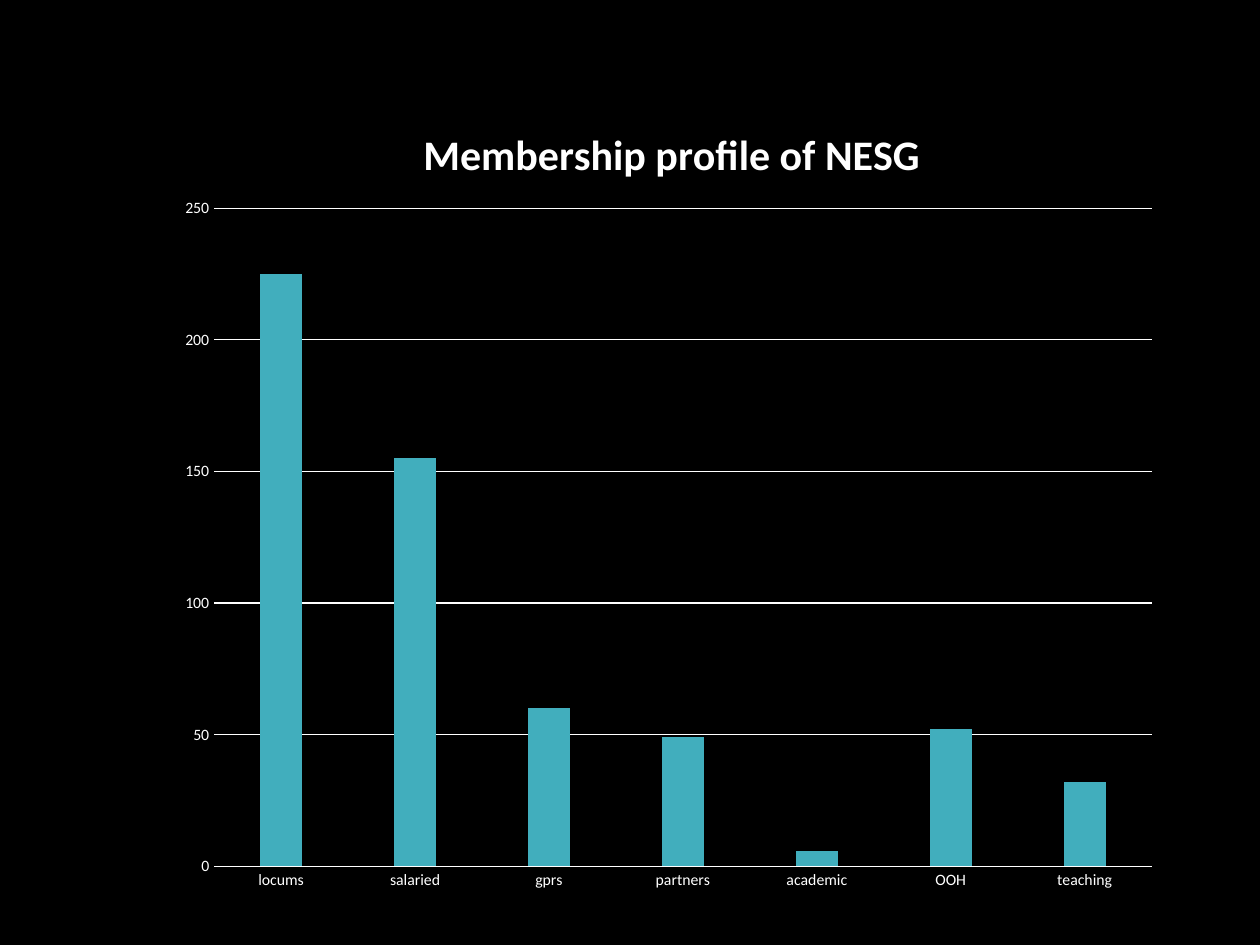
from dataclasses import dataclass

from lxml.etree import SubElement
from pptx import Presentation
from pptx.chart.data import CategoryChartData
from pptx.dml.color import RGBColor
from pptx.enum.chart import XL_CHART_TYPE, XL_TICK_MARK
from pptx.oxml import parse_xml
from pptx.oxml.ns import nsdecls, qn
from pptx.util import Inches, Pt


@dataclass(frozen=True)
class Theme:
    face: str = "Calibri"
    back: RGBColor = RGBColor(0, 0, 0)
    ink: RGBColor = RGBColor(255, 255, 255)
    bar: RGBColor = RGBColor(0x41, 0xAE, 0xBD)
    head: int = 24
    base: int = 10
    tick: int = 9
    rule: float = 0.75


class Deck:
    def __init__(self, theme):
        self.theme = theme
        self.prs = Presentation()
        self.prs.slide_width, self.prs.slide_height = Inches(10), Inches(7.5)
        self.slide = self.prs.slides.add_slide(self.prs.slide_layouts[6])
        fill = self.slide.background.fill
        fill.solid()
        fill.fore_color.rgb = theme.back

    def style(self, font, size, bold=False):
        font.name, font.size, font.bold = self.theme.face, Pt(size), bold
        font.color.rgb = self.theme.ink

    def line(self, form):
        form.line.color.rgb = self.theme.ink
        form.line.width = Pt(self.theme.rule)

    def place(self, part, **share):
        """Fix a chart part at shares of the chart's size."""
        area = part.find(qn("c:layout"))
        if area is None:
            area = parse_xml(f"<c:layout {nsdecls('c')}/>")
            part.insert(1 if part.tag == qn("c:title") else 0, area)
        spot = SubElement(area, qn("c:manualLayout"))
        if "w" in share:
            SubElement(spot, qn("c:layoutTarget")).set("val", "inner")
        for key in "xy":
            SubElement(spot, qn(f"c:{key}Mode")).set("val", "edge")
        for key, value in share.items():
            SubElement(spot, qn(f"c:{key}")).set("val", str(value))

    def columns(self, title, data, left, top, width, height):
        """Add a column chart; its box is in shares of the slide."""
        wide, high = self.prs.slide_width, self.prs.slide_height
        box = [int(wide * left), int(high * top), int(wide * width), int(high * height)]
        chart = self.slide.shapes.add_chart(
            XL_CHART_TYPE.COLUMN_CLUSTERED, *box, data).chart
        self.style(chart.font, self.theme.base)
        chart.has_legend = False

        # Title
        chart.has_title = True
        chart.chart_title.include_in_layout = False
        para = chart.chart_title.text_frame.paragraphs[0]
        para.text = title
        self.style(para.font, self.theme.head, bold=True)
        self.place(chart.chart_title._element, x=0.25, y=0.03)

        # Bars
        plot = chart.plots[0]
        plot.gap_width, plot.overlap, plot.vary_by_categories = 219, -27, False
        fill = plot.series[0].format.fill
        fill.solid()
        fill.fore_color.rgb = self.theme.bar

        # Axes and grid
        for axis in (chart.category_axis, chart.value_axis):
            axis.major_tick_mark = axis.minor_tick_mark = XL_TICK_MARK.NONE
            self.style(axis.tick_labels.font, self.theme.tick)
        self.line(chart.category_axis.format)
        scale = chart.value_axis
        scale.format.line.fill.background()
        scale.minimum_scale, scale.maximum_scale, scale.major_unit = 0, 250, 50
        scale.has_major_gridlines = True
        self.line(scale.major_gridlines.format)
        area = chart._chartSpace.chart.plotArea
        self.place(area, x=0.05, y=0.14, w=0.93, h=0.81)


def main():
    deck = Deck(Theme())

    # Membership by role
    data = CategoryChartData()
    data.categories = ["locums", "salaried", "gprs", "partners",
                       "academic", "OOH", "teaching"]
    data.add_series("Series 1", (225, 155, 60, 49, 6, 52, 32))
    deck.columns("Membership profile of NESG", data, 0.13, 0.1, 0.8, 0.86)

    deck.prs.save("out.pptx")


if __name__ == "__main__":
    main()
